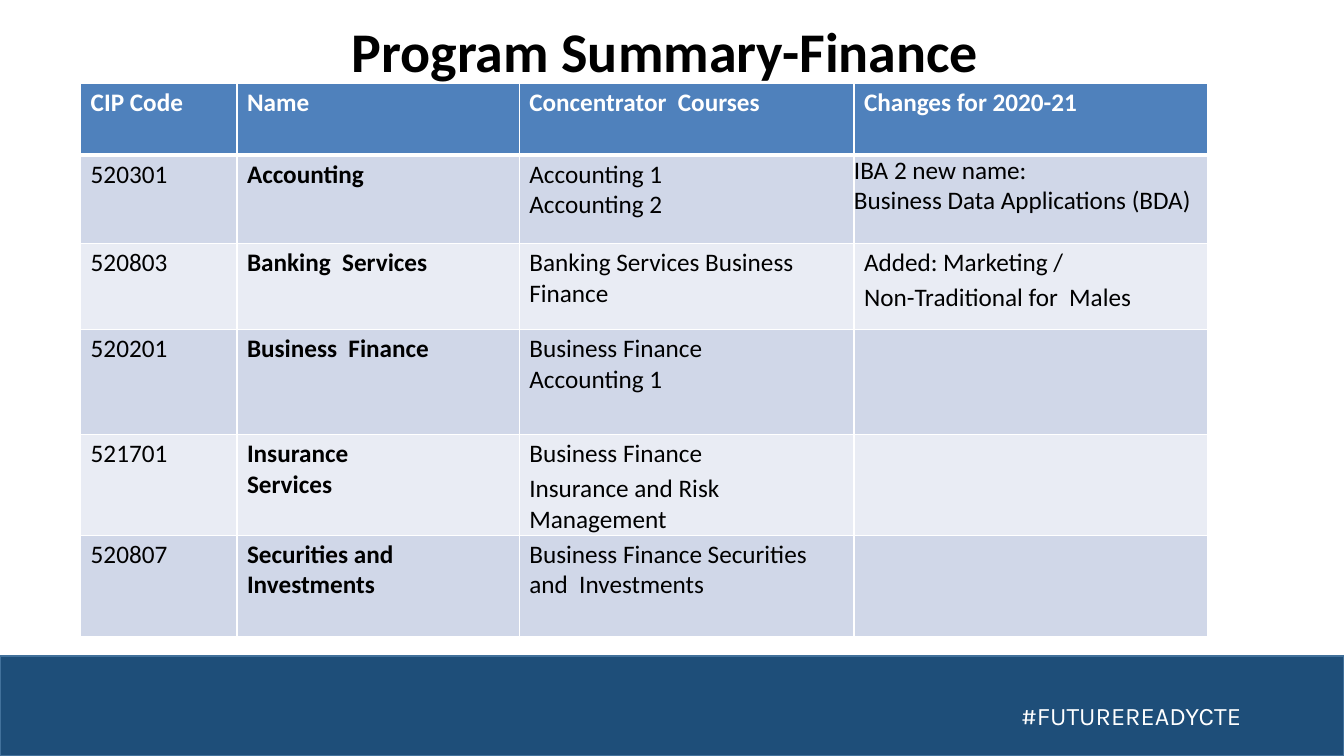
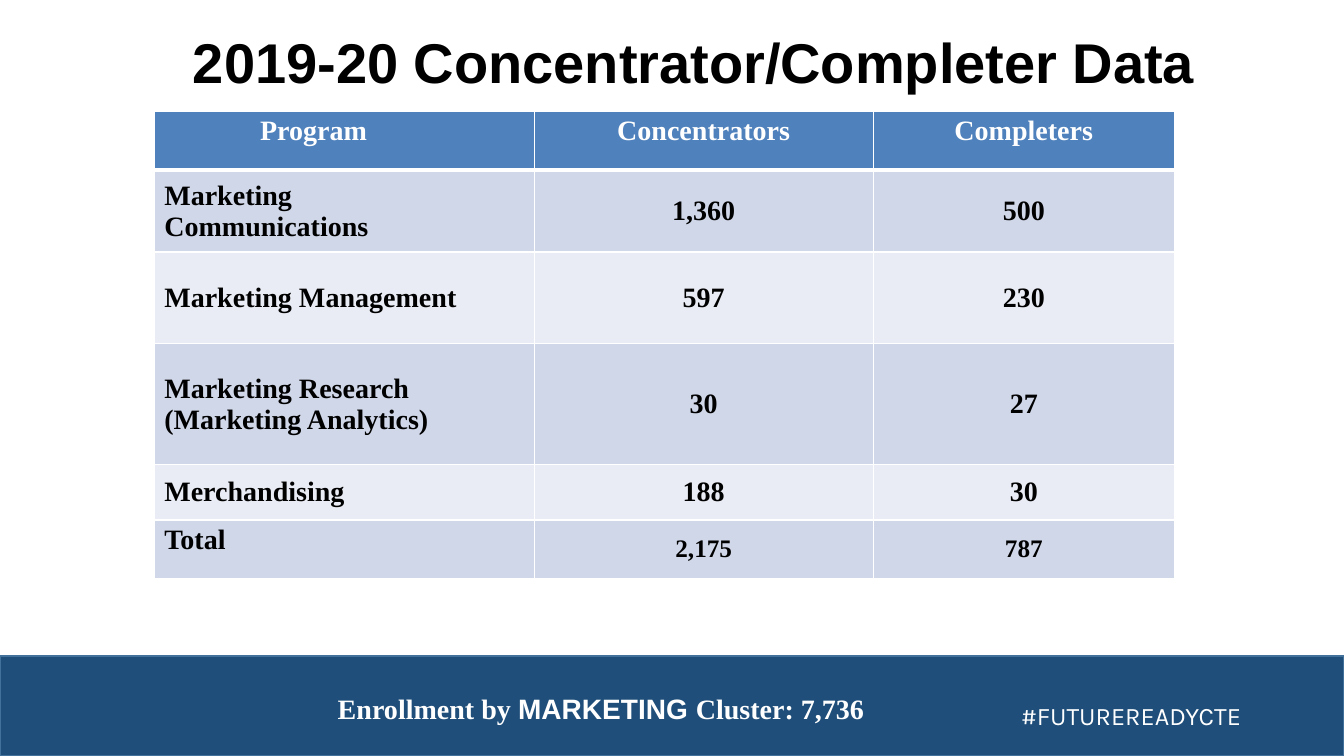
from dataclasses import dataclass

from lxml.etree import SubElement
from pptx import Presentation
from pptx.dml.color import RGBColor
from pptx.enum.shapes import MSO_SHAPE
from pptx.enum.text import MSO_ANCHOR, PP_ALIGN
from pptx.oxml.ns import qn
from pptx.util import Inches, Pt


@dataclass(frozen=True)
class Theme:
    band: str = "1E4E79"
    band_line: str = "42719B"
    header: str = "4F81BC"
    rows: tuple = ("D0D7E8", "E9ECF4")
    white: str = "FFFFFF"
    black: str = "000000"
    sans: str = "Calibri"
    title_sans: str = "Arial"
    serif: str = "Times New Roman"
    tag: str = "Karla"
    title_size: int = 40
    large: int = 20
    body: int = 18


T = Theme()


def set_font(font, name, size, color, bold=False):
    font.name, font.size, font.bold = name, Pt(size), bold
    font.color.rgb = RGBColor.from_string(color)


def add_text(s, box, margins=(0, 0.01, 0, 0), anchor=MSO_ANCHOR.TOP):
    """Add a wrapping text box and return its first paragraph."""
    tf = s.shapes.add_textbox(*map(Inches, box)).text_frame
    tf.word_wrap = True
    tf.vertical_anchor = anchor
    (tf.margin_left, tf.margin_top,
     tf.margin_right, tf.margin_bottom) = map(Inches, margins)
    return tf.paragraphs[0]


def add_title(s, box, text, font):
    p = add_text(s, box, anchor=MSO_ANCHOR.MIDDLE)
    p.text = text
    p.alignment = PP_ALIGN.CENTER
    set_font(p.font, font, T.title_size, T.black, True)


def add_footer(s, box):
    """Blue band with the hashtag at its right."""
    left, top, width, height = box
    sp = s.shapes.add_shape(MSO_SHAPE.RECTANGLE, *map(Inches, box))
    sp.shadow.inherit = False
    sp.fill.solid()
    sp.fill.fore_color.rgb = RGBColor.from_string(T.band)
    sp.line.color.rgb = RGBColor.from_string(T.band_line)
    sp.line.width = Pt(1)
    p = add_text(s, (left + width - 3.3, top + 0.39, 2.39, 0.4),
                 (0.1, 0.05, 0.1, 0.05))
    p.text = "#FUTUREREADYCTE"
    set_font(p.font, T.tag, T.body, T.white)


def set_borders(cell, top, bottom):
    tc_pr = cell._tc.get_or_add_tcPr()
    for side, width in (("L", 1), ("R", 1), ("T", top), ("B", bottom)):
        ln = SubElement(tc_pr, qn(f"a:ln{side}"), w=str(Pt(width)))
        fill = SubElement(ln, qn("a:solidFill"))
        SubElement(fill, qn("a:srgbClr"), val=T.white)


def add_grid(s, box, cols, heights, data, font, size, bold_cols):
    """Banded table; \\n starts a paragraph and \\v breaks a line."""
    frame = s.shapes.add_table(len(data), len(cols), *map(Inches, box))
    table = frame.table
    table.horz_banding = False
    for col, width in zip(table.columns, cols):
        col.width = Inches(width)
    for i, (row, height, texts) in enumerate(zip(table.rows, heights, data)):
        row.height = Inches(height)
        for j, (cell, text) in enumerate(zip(row.cells, texts)):
            set_borders(cell, 3 if i == 1 else 1, 3 if i == 0 else 1)
            cell.fill.solid()
            cell.fill.fore_color.rgb = RGBColor.from_string(
                T.rows[(i - 1) % 2] if i else T.header)
            cell.margin_left, cell.margin_top = Inches(0.1), Inches(0.04)
            cell.margin_right = cell.margin_bottom = 0
            cell.text_frame.text = text
            for k, p in enumerate(cell.text_frame.paragraphs):
                if k:
                    p.space_before = Pt(3)
                set_font(p.font, font, size, T.black if i else T.white,
                         i == 0 or j in bold_cols)
    return table


def finance_slide(s):
    add_title(s, (1.32, 0.14, 10.55, 0.7), "Program Summary-Finance", T.sans)
    table = add_grid(
        s, (0.8, 0.83, 11.18, 5.49), (1.55, 2.8, 3.32, 3.51),
        (0.71, 0.88, 0.85, 1.04, 1, 1.01),
        [("CIP Code", "Name", "Concentrator  Courses", "Changes for 2020-21"),
         ("520301", "Accounting", "Accounting 1\vAccounting 2",
          "IBA 2 new name:\vBusiness Data Applications (BDA)"),
         ("520803", "Banking  Services", "Banking Services Business Finance",
          "Added: Marketing /\nNon-Traditional for  Males"),
         ("520201", "Business  Finance", "Business Finance\vAccounting 1", ""),
         ("521701", "Insurance\vServices",
          "Business Finance\nInsurance and Risk\vManagement", ""),
         ("520807", "Securities and\vInvestments",
          "Business Finance Securities\vand  Investments", "")],
        T.sans, T.body, {1})
    # The renamed course sits flush in its cell
    renamed = table.cell(1, 3)
    renamed.margin_left = renamed.margin_top = 0


def completer_slide(s):
    add_title(s, (1.35, 0.26, 11.06, 0.69),
              "2019-20 Concentrator/Completer Data", T.title_sans)
    data = [("Program", "Concentrators", "Completers"),
            ("Marketing\vCommunications", "1,360", "500"),
            ("Marketing Management", "597", "230"),
            ("Marketing Research\v(Marketing Analytics)", "30", "27"),
            ("Merchandising", "188", "30"),
            ("Total", "2,175", "787")]
    table = add_grid(s, (1.53, 1.11, 10.13, 4.64), (3.77, 3.36, 2.99),
                     (0.58, 0.81, 0.91, 1.2, 0.55, 0.58), data,
                     T.serif, T.large, {0, 1, 2})
    # Figures are centred; header row and total label stay at the top
    last = len(data) - 1
    for i in range(len(data)):
        for j in range(3):
            cell = table.cell(i, j)
            if j:
                cell.margin_left = 0
                cell.text_frame.paragraphs[0].alignment = PP_ALIGN.CENTER
            if i and (i, j) != (last, 0):
                cell.vertical_anchor = MSO_ANCHOR.MIDDLE
                cell.margin_top = 0
            if i == last and j:
                cell.text_frame.paragraphs[0].font.size = Pt(T.body)
    table.cell(0, 0).margin_left = Inches(1.05)

    # Enrollment line on the band, wide enough for one line
    p = add_text(s, (3.35, 6.85, 5.8, 0.35))
    for text, font in (("Enrollment by ", T.serif),
                       ("MARKETING ", T.title_sans),
                       ("Cluster: 7,736", T.serif)):
        r = p.add_run()
        r.text = text
        set_font(r.font, font, T.large, T.white, True)


def main():
    prs = Presentation()
    prs.slide_width, prs.slide_height = Inches(13.33), Inches(7.5)
    for build in (finance_slide, completer_slide):
        s = prs.slides.add_slide(prs.slide_layouts[6])
        add_footer(s, (0, 6.51, 13.33, 0.99))
        build(s)
    prs.save("out.pptx")


if __name__ == "__main__":
    main()
